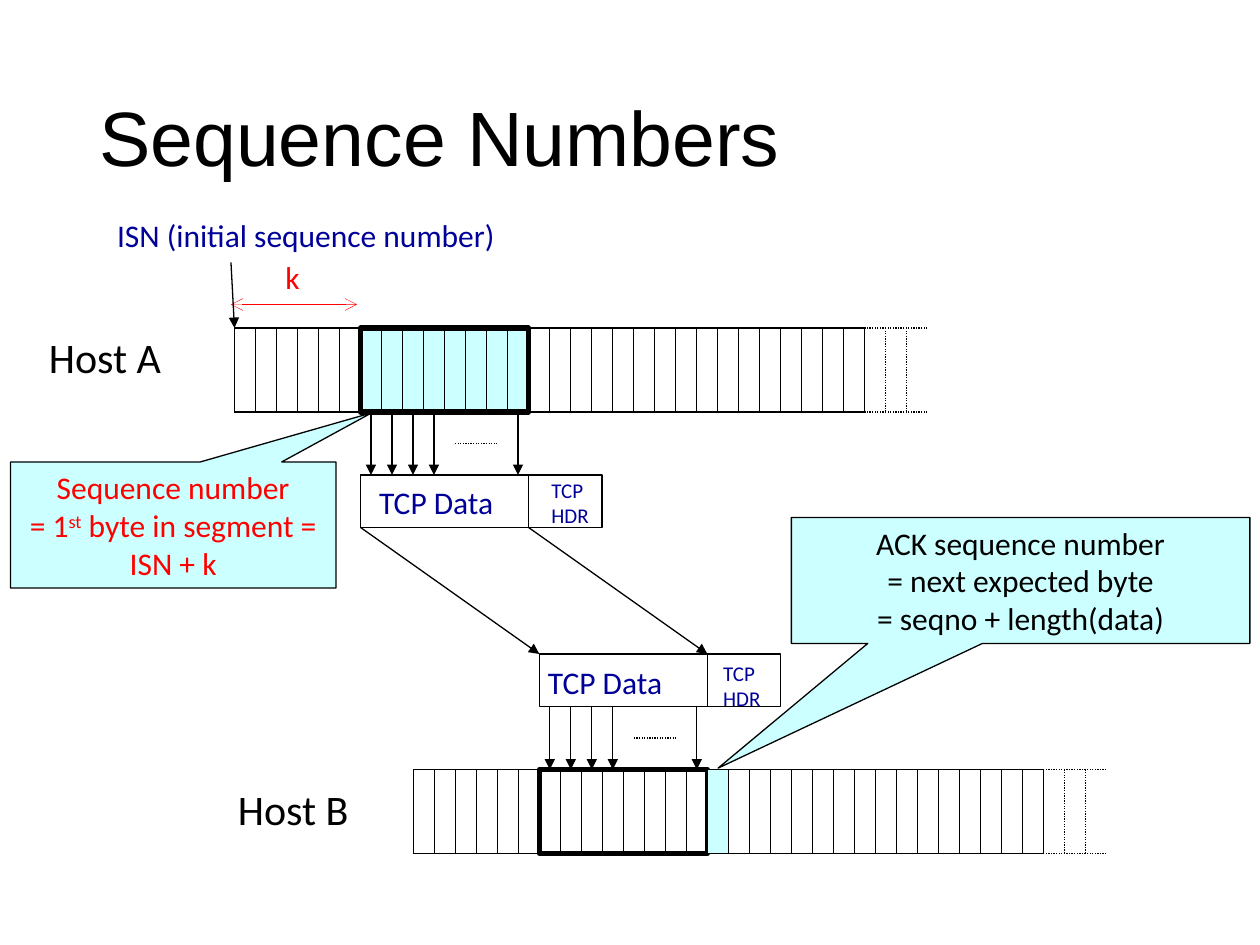
from pptx import Presentation
from pptx.dml.color import RGBColor
from pptx.enum.dml import MSO_LINE
from pptx.enum.shapes import MSO_CONNECTOR, MSO_SHAPE
from pptx.enum.text import MSO_ANCHOR, MSO_AUTO_SIZE, PP_ALIGN
from pptx.oxml.ns import qn
from pptx.util import Pt
from lxml import etree

STRAIGHT = MSO_CONNECTOR.STRAIGHT
RECT, CALLOUT = MSO_SHAPE.RECTANGLE, MSO_SHAPE.RECTANGULAR_CALLOUT
DOTTED = MSO_LINE.ROUND_DOT
LEFT, CENTER = PP_ALIGN.LEFT, PP_ALIGN.CENTER
TOP, MIDDLE = MSO_ANCHOR.TOP, MSO_ANCHOR.MIDDLE
NO_FIT = MSO_AUTO_SIZE.NONE

COLORS = {"black": "000000", "white": "FFFFFF", "aqua": "CCFFFF",
          "navy": "000099", "red": "FF0000"}

# Byte stream geometry, in points
CELL = 12
ROW_HEIGHT = 48
SOLID_CELLS = 30
DOTTED_CELLS = 3
SEGMENT_START = 6 * CELL
SEGMENT_WIDTH = 8 * CELL
SENT_CELLS = (0, 1, 2, 3, 7)
ARROW_HEIGHT = 36
PACKET_HEIGHT = 30
HEADER_WIDTH = 42


def rgb(name):
    return RGBColor.from_string(COLORS[name])


def add_line(slide, x1, y1, x2, y2, color="black", width=0.75,
             dotted=False, head=None, tail=None):
    line = slide.shapes.add_connector(STRAIGHT, Pt(x1), Pt(y1), Pt(x2), Pt(y2))
    line.line.color.rgb = rgb(color)
    line.line.width = Pt(width)
    if dotted:
        line.line.dash_style = DOTTED
    properties = line._element.spPr
    outline = properties.find(qn("a:ln"))
    for tag, kind in (("a:headEnd", head), ("a:tailEnd", tail)):
        if kind:
            etree.SubElement(outline, qn(tag)).set("type", kind)
    etree.SubElement(properties, qn("a:effectLst"))


def add_box(slide, left, top, width, height, fill=None, weight=0.75, kind=RECT):
    box = slide.shapes.add_shape(kind, Pt(left), Pt(top), Pt(width), Pt(height))
    box.shadow.inherit = False
    if fill:
        box.fill.solid()
        box.fill.fore_color.rgb = rgb(fill)
    else:
        box.fill.background()
    box.line.color.rgb = rgb("black")
    box.line.width = Pt(weight)
    return box


def format_para(para, size, color, align=LEFT, font="Calibri"):
    para.alignment = align
    para.font.name = font
    para.font.size = Pt(size)
    para.font.color.rgb = rgb(color)


def add_label(slide, text, left, top, width, height, size=18, color="navy"):
    box = slide.shapes.add_textbox(Pt(left), Pt(top), Pt(width), Pt(height))
    box.text_frame.word_wrap = True
    box.text_frame.text = text
    for para in box.text_frame.paragraphs:
        format_para(para, size, color)


def add_callout(slide, left, top, width, height, tip):
    box = add_box(slide, left, top, width, height, "aqua", kind=CALLOUT)
    for index, value in enumerate(tip):
        box.adjustments[index] = value
    box.text_frame.word_wrap = True
    box.text_frame.vertical_anchor = TOP
    return box


def add_title(slide, text):
    title = slide.shapes.title
    title.left, title.top = Pt(49.5), Pt(28.75)
    title.width, title.height = Pt(621), Pt(104.4)
    frame = title.text_frame
    frame.text = text
    frame.auto_size = NO_FIT
    frame.vertical_anchor = MIDDLE
    format_para(frame.paragraphs[0], 44, "black", font="Arial")
    frame.paragraphs[0].line_spacing = 0.9


def add_byte_row(slide, left, top):
    bottom = top + ROW_HEIGHT
    solid_end = left + SOLID_CELLS * CELL
    for y in (top, bottom):
        add_line(slide, left, y, solid_end, y)
        add_line(slide, solid_end + DOTTED_CELLS * CELL, y, solid_end, y, dotted=True)
    for index in range(SOLID_CELLS + DOTTED_CELLS):
        x = left + index * CELL
        add_line(slide, x, top, x, bottom, dotted=index > SOLID_CELLS)


def add_byte_arrows(slide, left, top):
    for index in SENT_CELLS:
        x = left + (index + 0.5) * CELL
        add_line(slide, x, top, x, top + ARROW_HEIGHT, tail="triangle")
    middle = top + ARROW_HEIGHT / 2
    add_line(slide, left + 4.5 * CELL, middle, left + 6.5 * CELL, middle, dotted=True)


def add_packet(slide, left, top, data_offset, header_offset):
    header_left = left + SEGMENT_WIDTH
    add_box(slide, left, top, SEGMENT_WIDTH, PACKET_HEIGHT, "white")
    add_box(slide, header_left, top, HEADER_WIDTH, PACKET_HEIGHT, "white")
    data_dx, data_dy = data_offset
    add_label(slide, "TCP Data", left + data_dx, top + data_dy, 94.3, 28.8)
    header_dx, header_dy = header_offset
    add_label(slide, "TCP\nHDR", header_left + header_dx, top + header_dy, 41, 36, size=12)


def main():
    deck = Presentation()
    deck.slide_width, deck.slide_height = Pt(720), Pt(540)
    page = deck.slides.add_slide(deck.slide_layouts[5])
    add_title(page, "Sequence Numbers")

    a_left, a_top = 134, 187.4
    b_left, b_top = 236.2, 439.7
    a_segment, b_segment = a_left + SEGMENT_START, b_left + SEGMENT_START
    a_bottom = a_top + ROW_HEIGHT
    a_packet = a_bottom + ARROW_HEIGHT
    b_packet = b_top - ARROW_HEIGHT - PACKET_HEIGHT

    # Byte streams of both hosts
    add_box(page, a_segment, a_top, SEGMENT_WIDTH, ROW_HEIGHT, "aqua", 3)
    add_byte_row(page, a_left, a_top)
    add_byte_row(page, b_left, b_top)
    add_label(page, "Host A", 20.9, 185.8, 86.4, 36, 24, "black")
    add_label(page, "Host B", 128.9, 444.2, 87.1, 36, 24, "black")

    # Packet on its way from A to B
    add_packet(page, a_segment, a_packet, (3.5, 0.8), (6, -2))
    add_packet(page, b_segment, b_packet, (-2.2, 1.4), (2, 0))
    for corner in (0, SEGMENT_WIDTH):
        add_line(page, a_segment + corner, a_packet + PACKET_HEIGHT,
                 b_segment + corner, b_packet, tail="triangle")
    add_byte_arrows(page, a_segment, a_bottom)
    add_byte_arrows(page, b_segment, b_packet + PACKET_HEIGHT)

    # Received segment and next expected byte
    add_box(page, b_segment, b_top, SEGMENT_WIDTH, ROW_HEIGHT, weight=3)
    ack = add_callout(page, 452.2, 295.7, 262, 72, (-0.66, 1.49))
    ack.text_frame.text = ("ACK sequence number\n= next expected byte\n"
                           "= seqno + length(data)")
    for para in ack.text_frame.paragraphs:
        format_para(para, 18, "black", CENTER)
    add_box(page, b_segment + SEGMENT_WIDTH, b_top, CELL, ROW_HEIGHT, "aqua")

    # Sequence number of the segment
    add_label(page, "ISN (initial sequence number)", 59.8, 120.2, 254.2, 28.8)
    sequence = add_callout(page, 6, 264, 186, 72, (0.61, -0.89))
    para = sequence.text_frame.paragraphs[0]
    format_para(para, 18, "red", CENTER)
    para.add_run().text = "Sequence number"
    para.add_line_break()
    para.add_run().text = "= 1"
    ordinal = para.add_run()
    ordinal.text = "st"
    ordinal.font._element.set("baseline", "30000")
    para.add_run().text = " byte in segment = ISN + k"

    # Offset k from the initial sequence number
    add_line(page, 132, 174, 204, 174, "red", 0.25, head="arrow", tail="arrow")
    add_line(page, 132, 150, a_left, a_top, tail="triangle")
    add_label(page, "k", 156, 144, 26.6, 31.7, color="red")

    deck.save("out.pptx")


if __name__ == "__main__":
    main()
